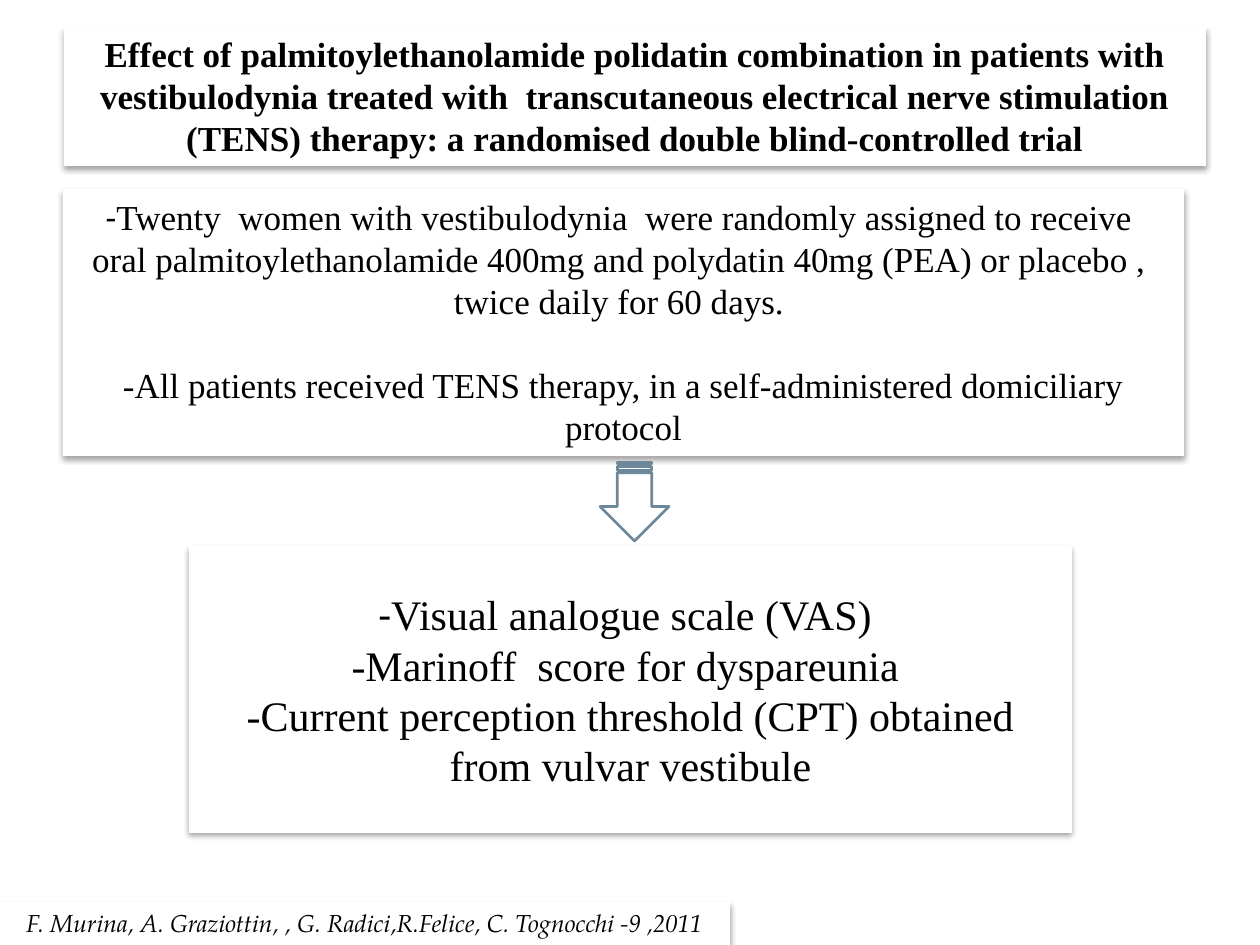
import lxml.etree
import pptx
import pptx.dml.color
import pptx.enum.shapes
import pptx.enum.text
import pptx.oxml.ns
import pptx.util

PX = 914400 / 126
SERIF = "Times New Roman"
DASH = "Calibri"
CITATION = "TeX Gyre Pagella"
BLACK = "000000"
WHITE = "FFFFFF"
STEEL = "6D879B"


def px(length):
    """Turn pixels into EMU."""
    return pptx.util.Emu(round(length * PX))


def color(value):
    """Turn a hex string into a colour."""
    return pptx.dml.color.RGBColor.from_string(value)


def add_shadow(shape):
    """Give a shape a soft shadow below it."""
    shape.shadow.inherit = False
    effects = shape._element.spPr.find(pptx.oxml.ns.qn("a:effectLst"))
    shadow = lxml.etree.SubElement(
        effects, pptx.oxml.ns.qn("a:outerShdw"), blurRad="38100",
        dist="25400", dir="5400000", rotWithShape="0")
    tint = lxml.etree.SubElement(shadow, pptx.oxml.ns.qn("a:srgbClr"), val=BLACK)
    lxml.etree.SubElement(tint, pptx.oxml.ns.qn("a:alpha"), val="35000")


def add_run(paragraph, text, font, size, bold=False, italic=False):
    """Add one formatted run to a paragraph."""
    run = paragraph.add_run()
    run.text = text
    run.font.name = font
    run.font.size = pptx.util.Pt(size)
    run.font.bold = bold
    run.font.italic = italic
    run.font.color.rgb = color(BLACK)


def add_card(slide, box, size, paragraphs, middle=False, **style):
    """Add a white shadowed card and return its text paragraphs."""
    shape = slide.shapes.add_shape(
        pptx.enum.shapes.MSO_SHAPE.RECTANGLE, *map(px, box))
    shape.fill.solid()
    shape.fill.fore_color.rgb = color(WHITE)
    shape.line.fill.background()
    add_shadow(shape)
    frame = shape.text_frame
    frame.word_wrap = True
    anchor = pptx.enum.text.MSO_ANCHOR
    frame.vertical_anchor = anchor.MIDDLE if middle else anchor.TOP
    for index, runs in enumerate(paragraphs):
        paragraph = frame.add_paragraph() if index else frame.paragraphs[0]
        paragraph.alignment = pptx.enum.text.PP_ALIGN.CENTER
        for text, font in runs:
            add_run(paragraph, text, font, size, **style)
    return frame.paragraphs


def add_down_arrow(slide, box):
    """Add a striped arrow turned to point down."""
    arrow = slide.shapes.add_shape(
        pptx.enum.shapes.MSO_SHAPE.STRIPED_RIGHT_ARROW, *map(px, box))
    arrow.rotation = 90
    arrow.shadow.inherit = False
    arrow.fill.solid()
    arrow.fill.fore_color.rgb = color(WHITE)
    arrow.line.color.rgb = color(STEEL)
    arrow.line.width = pptx.util.Pt(1.5)


def main():
    """Build the trial summary slide."""
    presentation = pptx.Presentation()
    presentation.slide_width = px(1260)
    presentation.slide_height = px(945)
    slide = presentation.slides.add_slide(presentation.slide_layouts[6])

    add_card(slide, (64, 26, 1142, 140), 20, [[(
        "Effect of palmitoylethanolamide polidatin combination in patients with "
        "vestibulodynia treated with  transcutaneous electrical nerve stimulation "
        "(TENS) therapy: a randomised double blind-controlled trial", SERIF)]],
        bold=True)
    add_card(slide, (0, 902, 730, 43), 14, [[(
        "F. Murina, A. Graziottin, , G. Radici,R.Felice, C. Tognocchi -9 ,2011",
        CITATION)]], italic=True)
    methods = add_card(slide, (63, 189, 1121, 267), 20, [
        [("-", DASH),
         ("Twenty  women with vestibulodynia  were randomly assigned to receive  "
          "oral palmitoylethanolamide 400mg and polydatin 40mg (PEA) or placebo , ",
          SERIF)],
        [("twice daily for 60 days. ", SERIF)],
        [("-All patients received TENS therapy, in a self-administered "
          "domiciliary protocol", SERIF)]])
    methods[-1].space_before = pptx.util.Pt(24)
    add_card(slide, (189, 546, 883, 287), 24, [
        [("-", DASH), ("Visual analogue scale (VAS) ", SERIF)],
        [("-Marinoff  score for dyspareunia ", SERIF)],
        [("-Current perception threshold (CPT) obtained from vulvar vestibule",
          SERIF)]], middle=True)
    add_down_arrow(slide, (595, 467, 79, 69))
    presentation.save("out.pptx")


if __name__ == "__main__":
    main()
